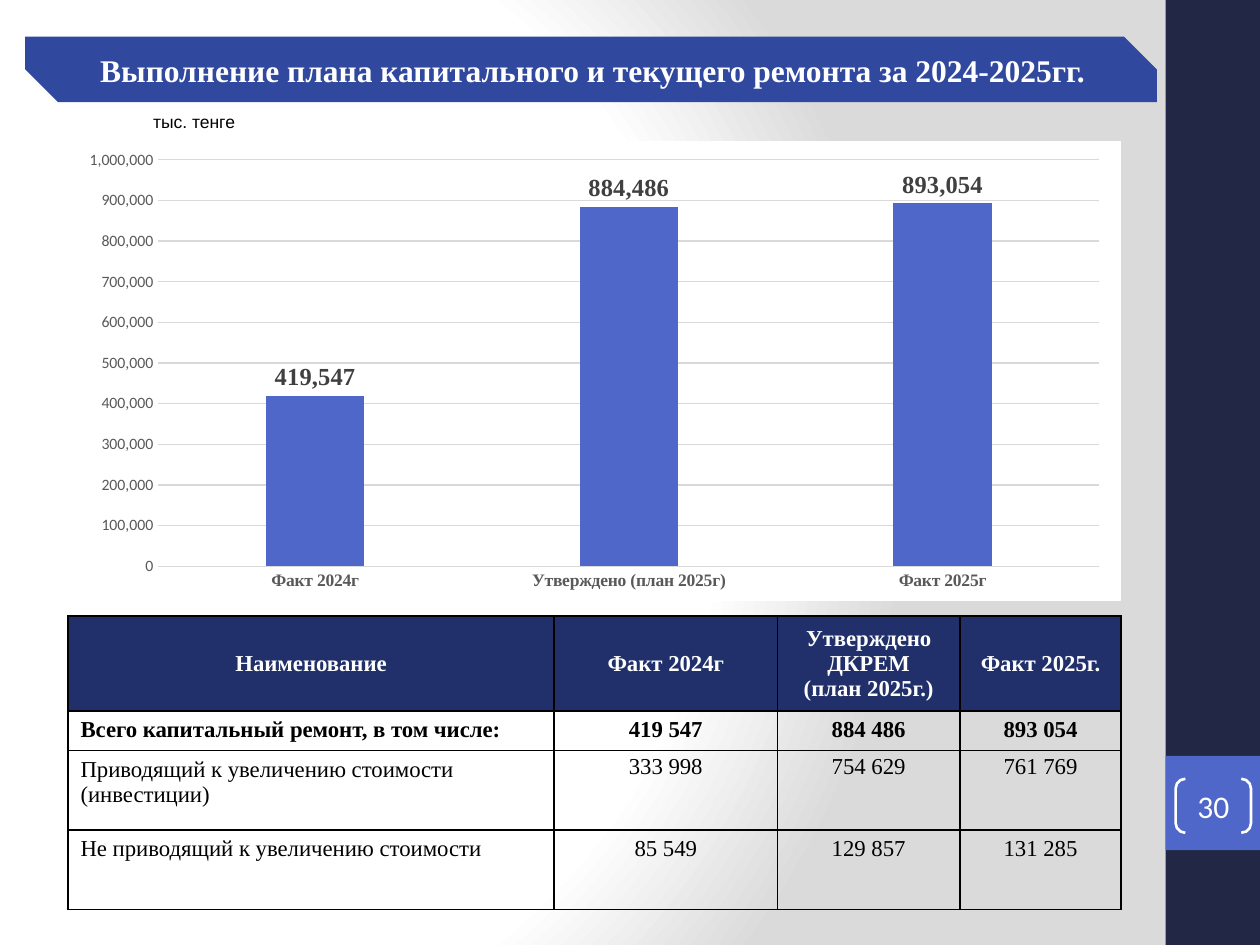
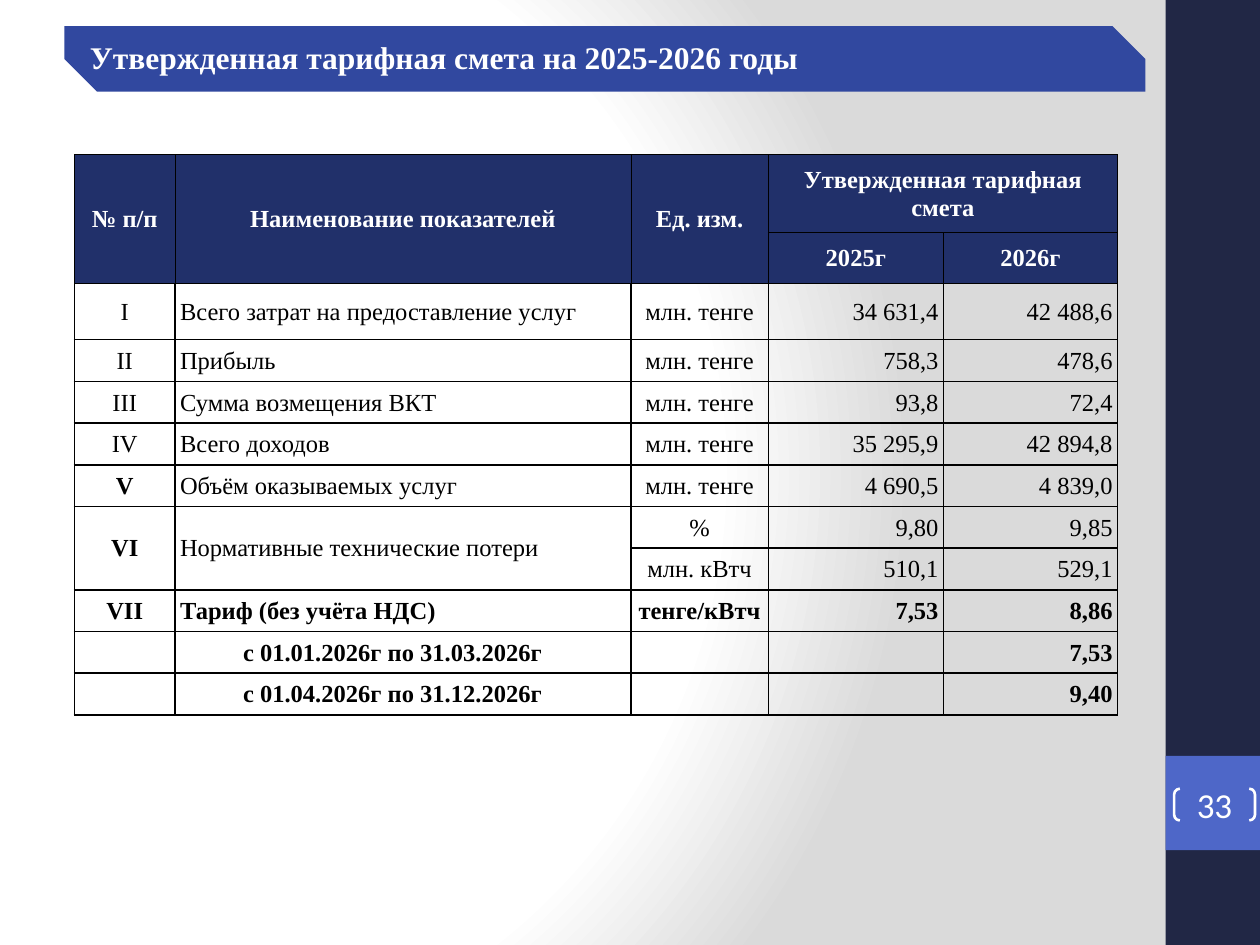
import pptx
import pptx.chart.data
import pptx.dml.color
import pptx.enum.chart
import pptx.enum.shapes
import pptx.enum.text
import pptx.oxml
import pptx.oxml.ns
import pptx.util

Cm, Pt = pptx.util.Cm, pptx.util.Pt
SHAPE = pptx.enum.shapes.MSO_SHAPE
ANCHOR = pptx.enum.text.MSO_ANCHOR
ALIGN = {
    "l": pptx.enum.text.PP_ALIGN.LEFT,
    "c": pptx.enum.text.PP_ALIGN.CENTER,
    "r": pptx.enum.text.PP_ALIGN.RIGHT,
}
COLORS = {
    "white": "FFFFFF",
    "black": "000000",
    "side": "212745",
    "accent": "4E67C8",
    "band": "31489F",
    "header": "21306A",
    "grey": "DADADA",
    "grid": "D9D9D9",
    "axis": "595959",
    "label": "404040",
}
SERIF, SANS, PLAIN = "Times New Roman", "Calibri", "Arial"


def rgb(name):
    """Return the named colour."""
    return pptx.dml.color.RGBColor.from_string(COLORS[name])


def xml(text):
    """Parse a drawing or chart fragment."""
    return pptx.oxml.parse_xml(text.replace(" NS", " " + pptx.oxml.ns.nsdecls("a", "c"), 1))


def solid(name):
    """Return the markup of a solid fill."""
    return f'<a:solidFill><a:srgbClr val="{COLORS[name]}"/></a:solidFill>'


def set_font(font, size, color, name=SERIF, bold=False):
    """Format a font."""
    font.size, font.name, font.bold = Pt(size), name, bold
    font.color.rgb = rgb(color)


def write(tf, text, size=14, color="black", font=SERIF, bold=False, align="l",
          indent=0, spacing=None):
    """Write lines of text into a text frame."""
    for i, line in enumerate(text.split("\n")):
        p = tf.add_paragraph() if i else tf.paragraphs[0]
        p.alignment = ALIGN[align]
        if spacing:
            p.line_spacing = spacing
        if indent:
            pPr = p._p.get_or_add_pPr()
            pPr.set("marL", str(Cm(indent)))
            pPr.set("indent", "0")
        r = p.add_run()
        r.text = line
        set_font(r.font, size, color, font, bold)


def set_margins(box, left, top, right, bottom):
    """Set the inner margins of a text frame or a cell."""
    box.margin_left, box.margin_top = Cm(left), Cm(top)
    box.margin_right, box.margin_bottom = Cm(right), Cm(bottom)


class Deck:
    """Hold the style and the current slide."""

    def __init__(self):
        """Open a presentation with the shared background."""
        self.prs = pptx.Presentation()
        self.prs.slide_width, self.prs.slide_height = Cm(25.4), Cm(19.05)
        master = self.prs.slide_master
        master.background.fill.solid()
        old = master.element.find(".//" + pptx.oxml.ns.qn("p:bgPr"))[0]
        stops = "".join(
            f'<a:gs pos="{pos}000"><a:srgbClr val="{COLORS[c]}"/></a:gs>'
            for pos, c in ((0, "white"), (75, "white"), (100, "grey")))
        old.getparent().replace(old, xml(
            f'<a:gradFill NS rotWithShape="1"><a:gsLst>{stops}</a:gsLst><a:path path="circle">'
            '<a:fillToRect l="20000" t="50000" r="100000" b="50000"/></a:path></a:gradFill>'))

    def slide(self, title, band, number, number_box, number_size, indent=0, spacing=None):
        """Start a slide with its side bar, title band and page number."""
        self.s = self.prs.slides.add_slide(self.prs.slide_layouts[5])
        self.shape(SHAPE.RECTANGLE, (23.5, 0, 1.9, 19.05), "side")
        self.shape(SHAPE.RECTANGLE, (23.5, 15.24, 1.9, 1.9), "accent")
        self.page_number(number, number_box, number_size)
        self.title(title, band, indent, spacing)

    def shape(self, kind, box, fill=None):
        """Add a preset shape without an outline."""
        sp = self.s.shapes.add_shape(kind, *map(Cm, box))
        sp.shadow.inherit = False
        if fill:
            sp.fill.solid()
            sp.fill.fore_color.rgb = rgb(fill)
        else:
            sp.fill.background()
        sp.line.fill.background()
        return sp

    def page_number(self, text, box, size):
        """Add a page number between brackets."""
        sp = self.shape(SHAPE.DOUBLE_BRACKET, box)
        sp.adjustments[0] = 0.18
        sp.line.color.rgb, sp.line.width = rgb("white"), Pt(1.5)
        tf = sp.text_frame
        tf.vertical_anchor = ANCHOR.MIDDLE
        set_margins(tf, 0, 0, 0, 0)
        write(tf, text, size=size, color="white", font=SANS, align="c")

    def title(self, text, box, indent, spacing):
        """Place the title placeholder on a snipped band."""
        band = self.shape(SHAPE.SNIP_2_DIAG_RECTANGLE, box, "band")
        band.adjustments[0], band.adjustments[1] = 0, 0.5
        sp = self.s.shapes.title
        band.element.addnext(sp.element)
        left, top, width, height = box
        snip = height / 4
        sp.left, sp.top = Cm(left + snip), Cm(top)
        sp.width, sp.height = Cm(width - 2 * snip), Cm(height)
        tf = sp.text_frame
        tf.auto_size = pptx.enum.text.MSO_AUTO_SIZE.NONE
        tf.vertical_anchor = ANCHOR.MIDDLE
        set_margins(tf, 0.18, 0.1, 0.18, 0.1)
        write(tf, text, size=18, color="white", bold=True, indent=indent, spacing=spacing)

    def text(self, text, box, **fmt):
        """Add a wrapped text box."""
        tf = self.s.shapes.add_textbox(*map(Cm, box)).text_frame
        tf.word_wrap = True
        write(tf, text, **fmt)

    def chart(self, box, cats, values):
        """Add a column chart with value labels."""
        data = pptx.chart.data.CategoryChartData(number_format="#,##0")
        data.categories = cats
        data.add_series("Series 1", values)
        kind = pptx.enum.chart.XL_CHART_TYPE.COLUMN_CLUSTERED
        chart = self.s.shapes.add_chart(kind, *map(Cm, box), data).chart
        chart.has_title = chart.has_legend = False
        set_font(chart.font, 10, "black", SANS)
        chart._chartSpace.chart.addnext(xml(
            f'<c:spPr NS>{solid("white")}<a:ln w="9525">{solid("white")}</a:ln></c:spPr>'))
        plot = chart.plots[0]
        plot.gap_width, plot.overlap, plot.vary_by_categories = 219, -27, False
        fill = plot.series[0].format.fill
        fill.solid()
        fill.fore_color.rgb = rgb("accent")
        plot.has_data_labels = True
        labels = plot.data_labels
        labels.show_value = True
        labels.number_format, labels.number_format_is_linked = "#,##0", False
        labels.position = pptx.enum.chart.XL_LABEL_POSITION.OUTSIDE_END
        set_font(labels.font, 14, "label", bold=True)
        cat, val = chart.category_axis, chart.value_axis
        for axis in (cat, val):
            axis.major_tick_mark = axis.minor_tick_mark = pptx.enum.chart.XL_TICK_MARK.NONE
        set_font(cat.tick_labels.font, 10, "axis", bold=True)
        set_font(val.tick_labels.font, 9, "axis", SANS)
        val.minimum_scale, val.maximum_scale, val.major_unit = 0, 1000000, 100000
        val.tick_labels.number_format = "#,##0"
        val.tick_labels.number_format_is_linked = False
        val.format.line.fill.background()
        for line in (cat.format.line, val.major_gridlines.format.line):
            line.color.rgb, line.width = rgb("grid"), Pt(0.75)

    def table(self, at, cols, heights, data, aligns, size, header_rows=1, header_border=1,
              bold=lambda i, j: False, indent=lambda i, j: 0, margins=None, middle=False):
        """Add a bordered table with a dark header and return it."""
        frame = self.s.shapes.add_table(len(heights), len(cols), *map(Cm, at),
                                        Cm(sum(cols)), Cm(sum(heights)))
        t = frame.table
        t.first_row = t.horz_banding = False
        for col, width in zip(t.columns, cols):
            col.width = Cm(width)
        for i, (row, height) in enumerate(zip(t.rows, heights)):
            row.height = Cm(height)
            head = i < header_rows
            for j, cell in enumerate(row.cells):
                self.borders(cell, header_border if head else 1)
                if head:
                    cell.fill.solid()
                    cell.fill.fore_color.rgb = rgb("header")
                else:
                    cell.fill.background()
                cell.vertical_anchor = ANCHOR.MIDDLE if head or middle else ANCHOR.TOP
                align = "c" if head else aligns[j]
                if margins:
                    side, edge = margins
                    set_margins(cell, edge if align == "l" else side, side,
                                edge if align == "r" else side, 0)
                if data[i][j]:
                    write(cell.text_frame, data[i][j], size=size, align=align,
                          color="white" if head else "black",
                          bold=head or bold(i, j), indent=indent(i, j))
        return t

    def borders(self, cell, width):
        """Draw the four borders of a cell."""
        tcPr = cell._tc.get_or_add_tcPr()
        for side in "LRTB":
            tcPr.append(xml(f'<a:ln{side} NS w="{Pt(width)}">{solid("black")}</a:ln{side}>'))


def repair_slide(deck):
    """Build the slide on the repair plan."""
    deck.slide("Выполнение плана капитального и текущего ремонта за 2024-2025гг.",
               (0.51, 0.74, 22.81, 1.32), "30", (23.7, 15.7, 1.52, 1.09), 18, indent=1)
    deck.text("тыс. тенге", (2.84, 2.11, 3.4, 0.69), size=10, font=PLAIN)
    deck.chart((1.37, 2.84, 21.23, 9.27),
               ["Факт 2024г", "Утверждено (план 2025г)", "Факт 2025г"],
               [419547, 884486, 893054])
    data = [
        ["Наименование", "Факт 2024г", "Утверждено ДКРЕМ\n(план 2025г.)", "Факт 2025г."],
        ["Всего капитальный ремонт, в том числе:", "419 547", "884 486", "893 054"],
        ["Приводящий к увеличению стоимости (инвестиции)", "333 998", "754 629", "761 769"],
        ["Не приводящий к увеличению стоимости", "85 549", "129 857", "131 285"],
    ]
    t = deck.table((1.37, 12.42), [9.8, 4.5, 3.68, 3.25], [1.45, 0.56, 1.6, 1.6], data,
                   "lccc", 13, bold=lambda i, j: i == 1)
    for j in range(1, 4):
        set_margins(t.cell(2, j), 0.25, 0.08, 0.25, 0.08)


def tariff_slide(deck):
    """Build the slide on the tariff estimate."""
    deck.slide("Утвержденная тарифная смета на 2025-2026 годы",
               (1.3, 0.53, 21.79, 1.32), "33", (23.67, 15.9, 1.63, 0.64), 20, spacing=0.9)
    unit = "млн. тенге"
    data = [
        ["№ п/п", "Наименование показателей", "Ед. изм.", "Утвержденная тарифная смета", ""],
        ["", "", "", "2025г", "2026г"],
        ["I", "Всего затрат на предоставление услуг", unit, "34 631,4", "42 488,6"],
        ["II", "Прибыль", unit, "758,3", "478,6"],
        ["III", "Сумма возмещения ВКТ", unit, "93,8", "72,4"],
        ["IV", "Всего доходов", unit, "35 295,9", "42 894,8"],
        ["V", "Объём оказываемых услуг", unit, "4 690,5", "4 839,0"],
        ["VI", "Нормативные технические потери", "%", "9,80", "9,85"],
        ["", "", "млн. кВтч", "510,1", "529,1"],
        ["VII", "Тариф (без учёта НДС)", "тенге/кВтч", "7,53", "8,86"],
        ["", "с 01.01.2026г по 31.03.2026г", "", "", "7,53"],
        ["", "с 01.04.2026г по 31.12.2026г", "", "", "9,40"],
    ]
    t = deck.table((1.5, 3.12), [2.03, 9.19, 2.77, 3.53, 3.51],
                   [1.57, 1.02, 1.14] + [0.84] * 9, data, "clcrr", 14,
                   header_rows=2, header_border=0.5, margins=(0.02, 0.1), middle=True,
                   bold=lambda i, j: i >= 9 or (j == 0 and i >= 6),
                   indent=lambda i, j: 1.27 if j == 1 and i >= 10 else 0)
    for top, left, bottom, right in ((0, 0, 1, 0), (0, 1, 1, 1), (0, 2, 1, 2),
                                     (0, 3, 0, 4), (7, 0, 8, 0), (7, 1, 8, 1)):
        t.cell(top, left).merge(t.cell(bottom, right))


def main():
    """Build and save the presentation."""
    deck = Deck()
    repair_slide(deck)
    tariff_slide(deck)
    deck.prs.save("out.pptx")


if __name__ == "__main__":
    main()
